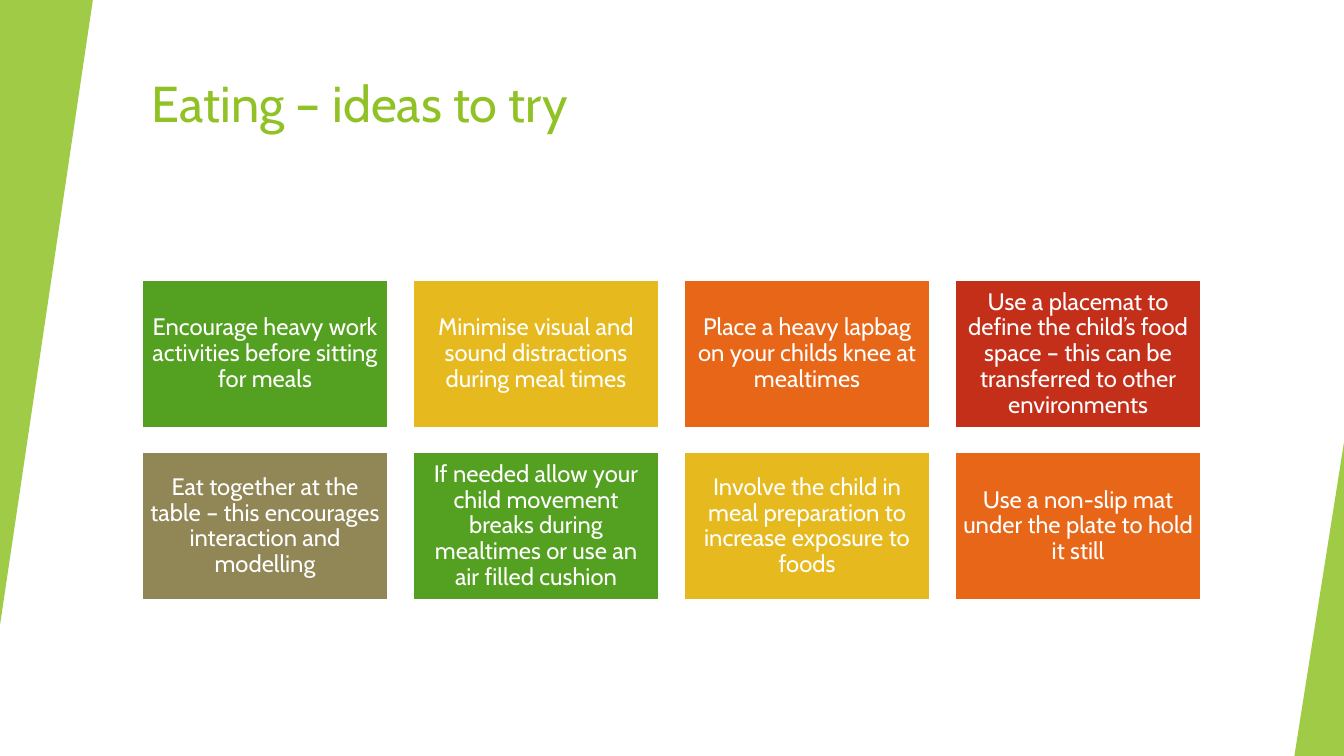
"""Build a slide of mealtime ideas in a grid of coloured cards."""
from lxml import etree
from pptx import Presentation
from pptx.dml.color import RGBColor
from pptx.enum.shapes import MSO_SHAPE
from pptx.enum.text import MSO_ANCHOR, PP_ALIGN
from pptx.oxml.ns import qn
from pptx.util import Cm, Pt

RECT = MSO_SHAPE.RECTANGLE
WEDGE = MSO_SHAPE.ISOSCELES_TRIANGLE
TOP = MSO_ANCHOR.TOP
MIDDLE = MSO_ANCHOR.MIDDLE
CENTER = PP_ALIGN.CENTER
FONT = "Cabin"
COLORS = {
    "lime": "90C226",
    "green": "54A021",
    "yellow": "E6B91E",
    "orange": "E76618",
    "red": "C42F1A",
    "khaki": "918655",
    "white": "FFFFFF",
}


def color(name):
    """Return the named colour."""
    return RGBColor.from_string(COLORS[name])


def style(para, size, name):
    """Set the font of a paragraph."""
    para.font.name = FONT
    para.font.size = Pt(size)
    para.font.color.rgb = color(name)


deck = Presentation()
deck.slide_width = Cm(33.87)
deck.slide_height = Cm(19.05)
slide = deck.slides.add_slide(deck.slide_layouts[6])

title = slide.shapes.add_textbox(Cm(3.58), Cm(1.7), Cm(28.32), Cm(3.05))
frame = title.text_frame
frame.word_wrap = True
frame.vertical_anchor = TOP
frame.text = "Eating – ideas to try"
style(frame.paragraphs[0], 36, "lime")

wedges = [(0, 0, 2.34, 15.75, 180), (32.62, 11.15, 1.25, 7.9, 0)]
for left, top, width, height, turn in wedges:
    wedge = slide.shapes.add_shape(WEDGE, Cm(left), Cm(top), Cm(width), Cm(height))
    wedge.adjustments[0] = 1
    wedge.rotation = turn
    wedge.shadow.inherit = False
    wedge.line.fill.background()
    wedge.fill.solid()
    wedge.fill.fore_color.rgb = color("lime")
    tint = wedge.fill._xPr.find(".//" + qn("a:srgbClr"))
    etree.SubElement(tint, qn("a:alpha"), val="85000")

ideas = [
    ("green", "Encourage heavy work activities before sitting for meals"),
    ("yellow", "Minimise visual and sound distractions during meal times"),
    ("orange", "Place a heavy lapbag on your childs knee at mealtimes"),
    ("red", "Use a placemat to define the child’s food space – this can be "
            "transferred to other environments"),
    ("khaki", "Eat together at the table – this encourages interaction and modelling"),
    ("green", "If needed allow your child movement breaks during mealtimes "
              "or use an air filled cushion"),
    ("yellow", "Involve the child in meal preparation to increase exposure to foods"),
    ("orange", "Use a non-slip mat under the plate to hold it still"),
]
for index, (shade, text) in enumerate(ideas):
    row, col = divmod(index, 4)
    card = slide.shapes.add_shape(
        RECT, Cm(3.58 + 6.83 * col), Cm(7.06 + 4.34 * row), Cm(6.2), Cm(3.72))
    card.shadow.inherit = False
    card.fill.solid()
    card.fill.fore_color.rgb = color(shade)
    card.line.color.rgb = color("white")
    card.line.width = Pt(1.5)
    frame = card.text_frame
    frame.word_wrap = True
    frame.vertical_anchor = MIDDLE
    frame.margin_left = frame.margin_right = Cm(0.18)
    frame.margin_top = frame.margin_bottom = Cm(0.18)
    frame.text = text
    para = frame.paragraphs[0]
    para.alignment = CENTER
    para.line_spacing = 0.9
    style(para, 17, "white")

deck.save("out.pptx")
